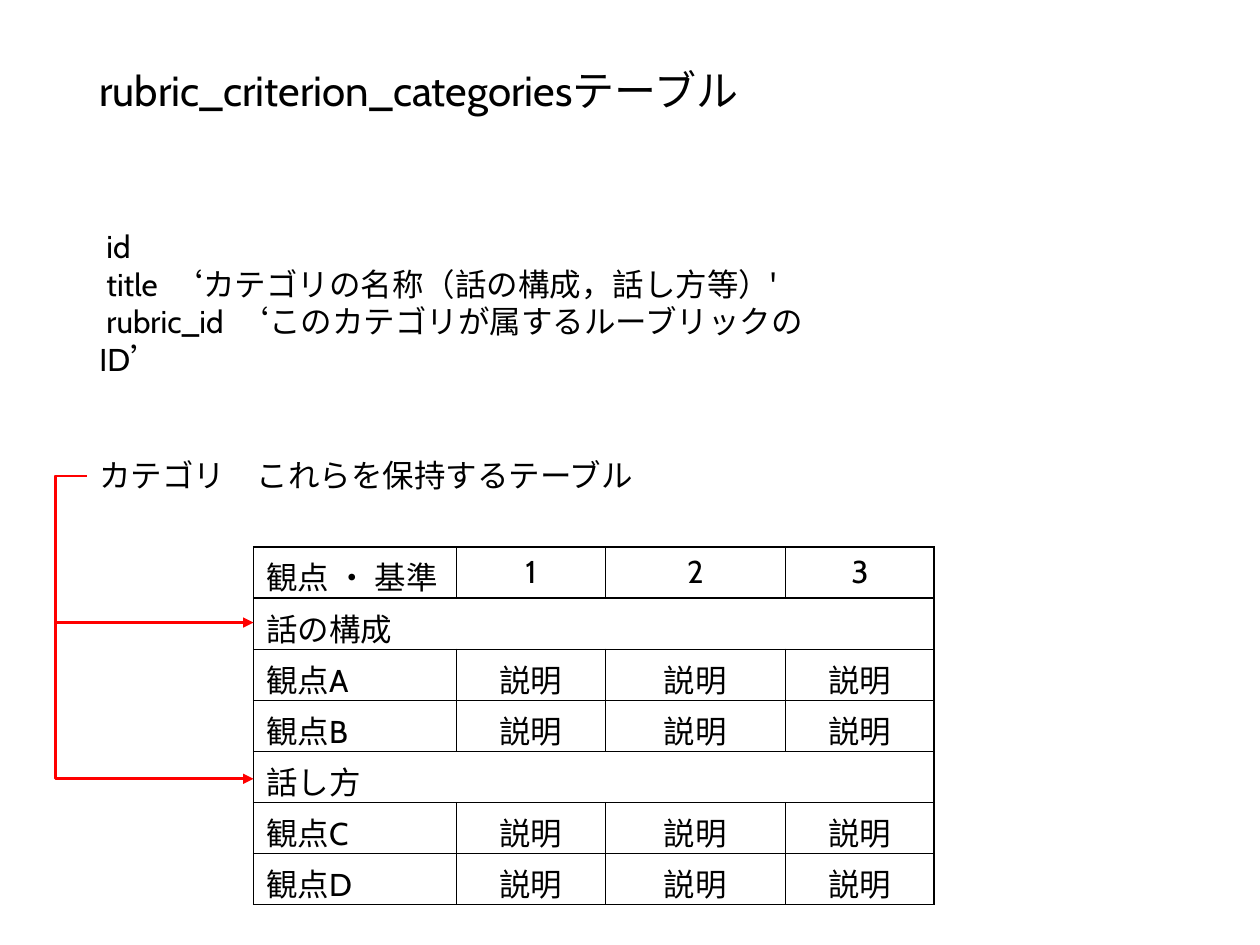
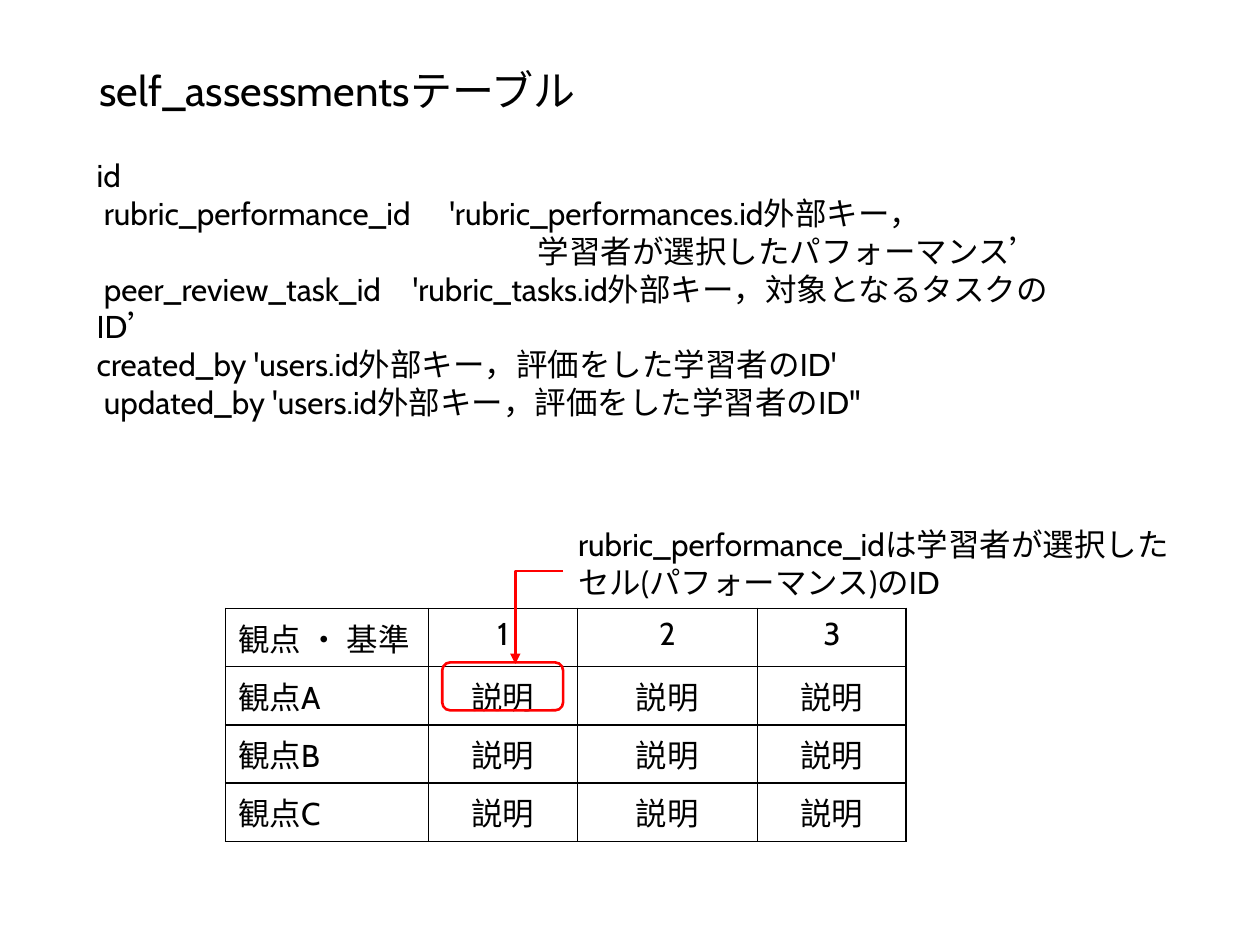
from dataclasses import dataclass

from lxml import etree
from pptx import Presentation
from pptx.dml.color import RGBColor
from pptx.enum.shapes import MSO_CONNECTOR, MSO_SHAPE
from pptx.enum.text import MSO_ANCHOR, MSO_AUTO_SIZE, PP_ALIGN
from pptx.oxml.ns import qn
from pptx.util import Pt

ELBOW = MSO_CONNECTOR.ELBOW
ROUND = MSO_SHAPE.ROUNDED_RECTANGLE
MIDDLE = MSO_ANCHOR.MIDDLE
GROW = MSO_AUTO_SIZE.SHAPE_TO_FIT_TEXT
LEFT, CENTER = PP_ALIGN.LEFT, PP_ALIGN.CENTER

COLORS = {"text": "000000", "grid": "000000", "mark": "FF0000"}
FONT = "Cabin"
BODY, TITLE = 18, 24
COLS = (116, 85, 103, 85)
HEAD = ("観点 ・ 基準", "1", "2", "3")
MARK_WIDTH = 1.5


@dataclass
class Box:
    left: float
    top: float
    width: float
    height: float


@dataclass
class Note:
    box: Box
    lines: tuple[str, ...]
    indents: dict[int, float]


@dataclass
class Grid:
    left: float
    top: float
    row: float
    rows: tuple[tuple[str, ...], ...]


@dataclass
class Link:
    start: tuple[float, float]
    end: tuple[float, float]
    preset: str
    bend: int | None = None


def color(name: str) -> RGBColor:
    return RGBColor.from_string(COLORS[name])


def place(box: Box) -> tuple:
    return Pt(box.left), Pt(box.top), Pt(box.width), Pt(box.height)


def style(para, size: float, align=LEFT) -> None:
    para.alignment = align
    for run in para.runs:
        run.font.name = FONT
        run.font.size = Pt(size)
        run.font.color.rgb = color("text")


def add_title(slide, text: str) -> None:
    frame = slide.shapes.add_textbox(*place(Box(49.7, 28.8, 620.6, 49))).text_frame
    frame.word_wrap = True
    frame.vertical_anchor = MIDDLE
    frame.text = text
    para = frame.paragraphs[0]
    para.line_spacing = 0.9
    style(para, TITLE)


def add_note(slide, note: Note) -> None:
    frame = slide.shapes.add_textbox(*place(note.box)).text_frame
    frame.word_wrap = True
    frame.auto_size = GROW
    frame.text = "\n".join(note.lines)
    for num, para in enumerate(frame.paragraphs):
        style(para, BODY)
        if num in note.indents:
            props = para._p.get_or_add_pPr()
            props.set("marL", str(Pt(note.indents[num])))
            props.set("indent", "0")


def add_edges(cell) -> None:
    props = cell._tc.get_or_add_tcPr()
    for num, side in enumerate(("lnL", "lnR", "lnT", "lnB")):
        edge = etree.Element(qn(f"a:{side}"), w=str(Pt(1)))
        fill = etree.SubElement(edge, qn("a:solidFill"))
        etree.SubElement(fill, qn("a:srgbClr"), val=COLORS["grid"])
        props.insert(num, edge)


def add_grid(slide, grid: Grid) -> None:
    """Draw a rubric; a row with a single text spans all columns."""
    count = len(grid.rows)
    box = Box(grid.left, grid.top, sum(COLS), grid.row * count)
    table = slide.shapes.add_table(count, len(COLS), *place(box)).table
    table.first_row = table.horz_banding = False
    for col, width in zip(table.columns, COLS):
        col.width = Pt(width)
    for y, texts in enumerate(grid.rows):
        table.rows[y].height = Pt(grid.row)
        for x in range(len(COLS)):
            cell = table.cell(y, x)
            cell.fill.background()
            add_edges(cell)
        if len(texts) == 1:
            table.cell(y, 0).merge(table.cell(y, len(COLS) - 1))
        for x, text in enumerate(texts):
            frame = table.cell(y, x).text_frame
            frame.text = text
            style(frame.paragraphs[0], BODY, CENTER if x else LEFT)


def add_link(slide, link: Link) -> None:
    ends = (Pt(v) for v in (*link.start, *link.end))
    line = slide.shapes.add_connector(ELBOW, *ends)
    line.line.color.rgb = color("mark")
    line.line.width = Pt(MARK_WIDTH)
    props = line._element.spPr
    shape = props.find(qn("a:prstGeom"))
    shape.set("prst", link.preset)
    if link.bend is not None:
        guides = shape.find(qn("a:avLst"))
        etree.SubElement(guides, qn("a:gd"), name="adj1", fmla=f"val {link.bend}")
    etree.SubElement(props.find(qn("a:ln")), qn("a:tailEnd"), type="triangle")
    etree.SubElement(props, qn("a:effectLst"))


def add_frame(slide, box: Box) -> None:
    shape = slide.shapes.add_shape(ROUND, *place(box))
    shape.shadow.inherit = False
    shape.fill.background()
    shape.line.color.rgb = color("mark")
    shape.line.width = Pt(MARK_WIDTH)


def rate(name: str) -> tuple[str, ...]:
    return (f"観点{name}", *["説明"] * 3)


def add_slide(deck, title: str):
    slide = deck.slides.add_slide(deck.slide_layouts[6])
    add_title(slide, title)
    return slide


def draw_groups(deck) -> None:
    slide = add_slide(deck, "rubric_criterion_categoriesテーブル")
    add_note(slide, Note(Box(49.7, 126, 430, 72.7), (
        " id",
        " title  ‘カテゴリの名称（話の構成，話し方等）'",
        " rubric_id  ‘このカテゴリが属するルーブリックのID’",
    ), {}))
    grid = Grid(144.9, 312.6, 29.2, (
        HEAD,
        ("話の構成",), rate("A"), rate("B"),
        ("話し方",), rate("C"), rate("D"),
    ))
    add_grid(slide, grid)
    for end in (355.7, 445):
        add_link(slide, Link((49.7, 272), (grid.left, end), "bentConnector3", -18900))
    add_note(slide, Note(
        Box(49.7, 257, 323.3, 29), ("カテゴリ\u3000これらを保持するテーブル".replace("\u3000", "　"),), {}))


def draw_checks(deck) -> None:
    slide = add_slide(deck, "self_assessmentsテーブル")
    add_grid(slide, Grid(128.9, 347.6, 33.3, (
        HEAD, rate("A"), rate("B"), rate("C"))))
    add_note(slide, Note(Box(48.2, 85.7, 591, 138.2), (
        "id",
        " rubric_performance_id　 'rubric_performances.id外部キー，",
        "学習者が選択したパフォーマンス’",
        " peer_review_task_id　'rubric_tasks.id外部キー，対象となるタスクのID’",
        "created_by 'users.id外部キー，評価をした学習者のID'",
        " updated_by 'users.id外部キー，評価をした学習者のID''",
    ), {2: 252}))
    add_frame(slide, Box(252.7, 378.5, 69.1, 27.4))
    add_link(slide, Link((321.8, 326.2), (294.5, 379.4), "bentConnector2"))
    add_note(slide, Note(Box(323.3, 296.6, 357.1, 51), (
        "rubric_performance_idは学習者が選択した",
        "セル(パフォーマンス)のID",
    ), {}))


def main() -> None:
    deck = Presentation()
    deck.slide_width, deck.slide_height = Pt(720), Pt(540)
    draw_groups(deck)
    draw_checks(deck)
    deck.save("out.pptx")


if __name__ == "__main__":
    main()
